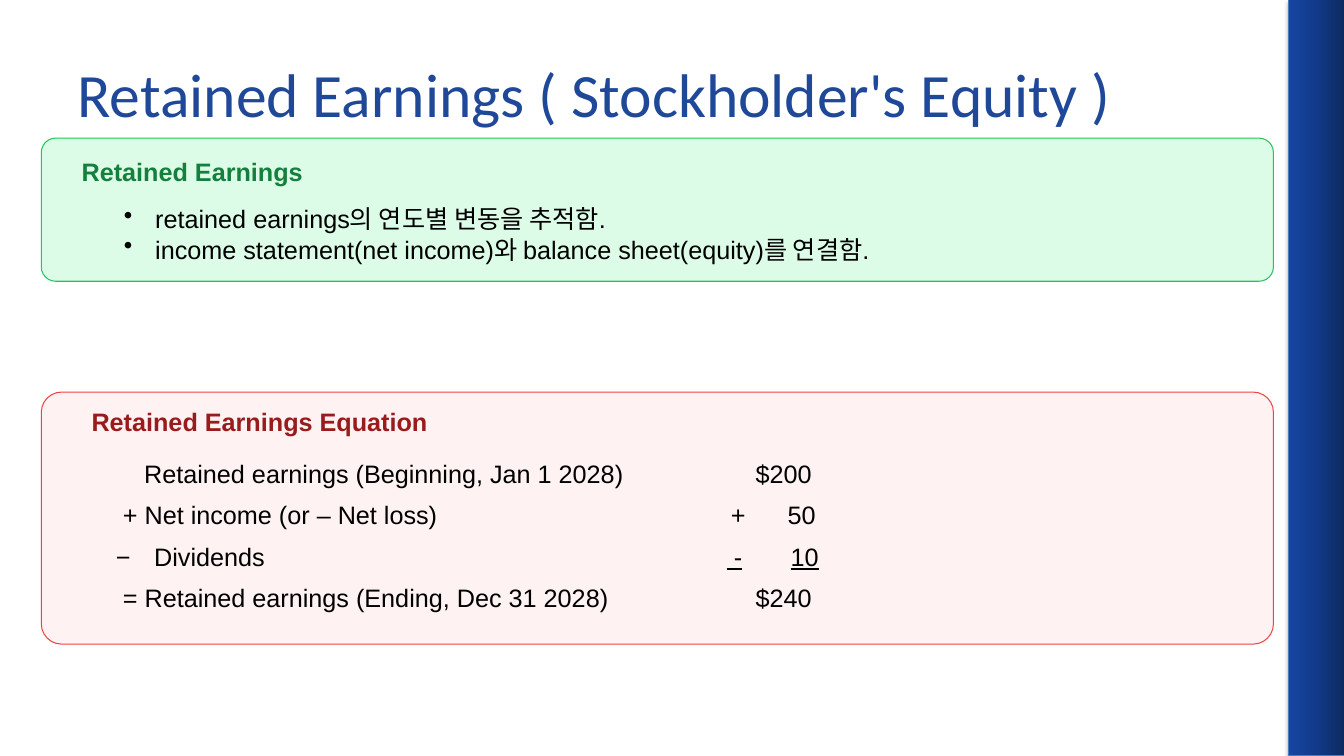
"""Build the retained earnings slide."""
from dataclasses import dataclass

from lxml import etree
from pptx import Presentation
from pptx.dml.color import RGBColor
from pptx.enum.shapes import MSO_SHAPE
from pptx.enum.text import MSO_ANCHOR
from pptx.oxml import parse_xml
from pptx.oxml.ns import nsdecls, qn
from pptx.slide import Slide
from pptx.text.text import TextFrame, _Paragraph
from pptx.util import Inches, Pt

RECT = MSO_SHAPE.RECTANGLE
ROUND = MSO_SHAPE.ROUNDED_RECTANGLE
TOP = MSO_ANCHOR.TOP
MIDDLE = MSO_ANCHOR.MIDDLE
PLAIN = "{2D5ABB26-0587-4C30-8999-92F81FD0307C}"
COLORS = {
    "title": "1F4899", "text": "000000", "edge": "4B7EBC",
    "dark": "0D2960", "mid": "123A89", "light": "1645A2",
    "mint": "DCFCE7", "green": "22C55E", "forest": "15803D",
    "pink": "FEF2F2", "red": "EF4444", "maroon": "991B1B",
}
Box = tuple[float, float, float, float]


@dataclass
class Panel:
    box: Box
    curve: float
    fill: str
    line: str


@dataclass
class Label:
    box: Box
    lines: list[str]
    color: str = "text"
    size: int = 18
    font: str = "Arial"
    bold: bool = False
    inset: bool = False
    anchor: MSO_ANCHOR = TOP
    lead: float = 0
    after: float = 0
    bullet: bool = False


@dataclass
class Entry:
    text: str
    stops: list[tuple[float, str]]
    total: str = ""


PANELS = [
    Panel((0.41, 1.37, 12.22, 1.42), 0.1, "mint", "green"),
    Panel((0.41, 3.89, 12.22, 2.5), 0.08, "pink", "red"),
]
LABELS = [
    Label((0.67, 0.3, 12, 1.25), ["Retained Earnings ( Stockholder's Equity )"],
          "title", 44, "Calibri", inset=True, anchor=MIDDLE),
    Label((0.81, 1.5, 11.96, 0.35), ["Retained Earnings"], "forest",
          bold=True, lead=25.2, after=12),
    Label((1.23, 2.02, 9.1, 0.67),
          ["retained earnings의 연도별 변동을 추적함.",
           "income statement(net income)와 balance sheet(equity)를 연결함."],
          bullet=True),
    Label((0.81, 4.03, 4.14, 0.35), ["Retained Earnings Equation"], "maroon",
          bold=True, inset=True, lead=18, after=10),
]
ENTRIES = [
    Entry("\tRetained earnings (Beginning, Jan 1 2028)\t$200",
          [(0.28, "l"), (6.9, "r")]),
    Entry(" + Net income (or – Net loss)\t+\t50", [(6.1, "l"), (6.94, "r")]),
    Entry("−\tDividends\t", [(0.38, "l"), (6.06, "l"), (6.97, "r")], " -\t10"),
    Entry(" = Retained earnings (Ending, Dec 31 2028)\t$240", [(6.9, "r")]),
]


def tint(name: str) -> RGBColor:
    return RGBColor.from_string(COLORS[name])


def add_run(para: _Paragraph, text: str, color: str, size: int = 18,
            font: str = "Arial", bold: bool = False, under: bool = False) -> None:
    run = para.add_run()
    run.text = text
    run.font.name = font
    run.font.size = Pt(size)
    run.font.bold = bold
    run.font.underline = under
    run.font.color.rgb = tint(color)


def set_gaps(para: _Paragraph, lead: float, after: float) -> None:
    if lead:
        para.line_spacing = Pt(lead)
    para.space_after = Pt(after)


def add_mark(para: _Paragraph) -> None:
    props = para._p.get_or_add_pPr()
    props.set("marL", str(Inches(0.31)))
    props.set("indent", str(Inches(-0.31)))
    etree.SubElement(props, qn("a:buChar")).set("char", "•")


def add_stops(para: _Paragraph, stops: list[tuple[float, str]]) -> None:
    tabs = etree.SubElement(para._p.get_or_add_pPr(), qn("a:tabLst"))
    for place, side in stops:
        tab = etree.SubElement(tabs, qn("a:tab"))
        tab.set("pos", str(Inches(place)))
        tab.set("algn", side)


def add_bar(slide: Slide) -> None:
    bar = slide.shapes.add_shape(RECT, *map(Inches, (12.78, 0, 0.56, 7.5)))
    bar.line.color.rgb = tint("edge")
    bar.line.width = Pt(0.75)
    stops = "".join(
        f'<a:gs pos="{place}"><a:srgbClr val="{COLORS[name]}"/></a:gs>'
        for place, name in ((0, "dark"), (50000, "mid"), (100000, "light")))
    props = bar._element.spPr
    props.find(qn("a:prstGeom")).addnext(parse_xml(
        f'<a:gradFill {nsdecls("a")}><a:gsLst>{stops}</a:gsLst>'
        '<a:lin ang="10800000" scaled="0"/></a:gradFill>'))
    props.append(parse_xml(
        f'<a:effectLst {nsdecls("a")}><a:outerShdw blurRad="{Pt(3.1)}" '
        f'dist="{Pt(1.8)}" dir="5400000" rotWithShape="0">'
        '<a:srgbClr val="000000"><a:alpha val="35000"/></a:srgbClr>'
        '</a:outerShdw></a:effectLst>'))


def add_panel(slide: Slide, panel: Panel) -> None:
    shape = slide.shapes.add_shape(ROUND, *map(Inches, panel.box))
    shape.shadow.inherit = False
    shape.adjustments[0] = panel.curve
    shape.fill.solid()
    shape.fill.fore_color.rgb = tint(panel.fill)
    shape.line.color.rgb = tint(panel.line)
    shape.line.width = Pt(0.75)


def clear_inset(frame: TextFrame) -> None:
    frame.margin_left = frame.margin_right = 0
    frame.margin_top = frame.margin_bottom = 0


def add_label(slide: Slide, label: Label) -> None:
    frame = slide.shapes.add_textbox(*map(Inches, label.box)).text_frame
    frame.word_wrap = True
    frame.vertical_anchor = label.anchor
    if not label.inset:
        clear_inset(frame)
    for index, line in enumerate(label.lines):
        para = frame.add_paragraph() if index else frame.paragraphs[0]
        if label.bullet:
            add_mark(para)
        set_gaps(para, label.lead, label.after)
        add_run(para, line, label.color, label.size, label.font, label.bold)


def add_sums(slide: Slide, entries: list[Entry]) -> None:
    box = map(Inches, (1.08, 4.6, 8.89, 1.64))
    table = slide.shapes.add_table(len(entries), 1, *box).table
    table.first_row = table.horz_banding = False
    table._tbl.tblPr.find(qn("a:tableStyleId")).text = PLAIN
    for index, entry in enumerate(entries):
        cell = table.cell(index, 0)
        cell.fill.background()
        cell.margin_left = cell.margin_right = Inches(0.07)
        cell.margin_top = cell.margin_bottom = 0
        para = cell.text_frame.paragraphs[0]
        add_stops(para, entry.stops)
        set_gaps(para, 18, 10)
        add_run(para, entry.text, "text")
        if entry.total:
            add_run(para, entry.total, "text", under=True)


def main() -> None:
    deck = Presentation()
    deck.slide_width = Inches(13.33)
    deck.slide_height = Inches(7.5)
    slide = deck.slides.add_slide(deck.slide_layouts[6])
    add_bar(slide)
    for panel in PANELS:
        add_panel(slide, panel)
    for label in LABELS:
        add_label(slide, label)
    add_sums(slide, ENTRIES)
    deck.save("out.pptx")


if __name__ == "__main__":
    main()
